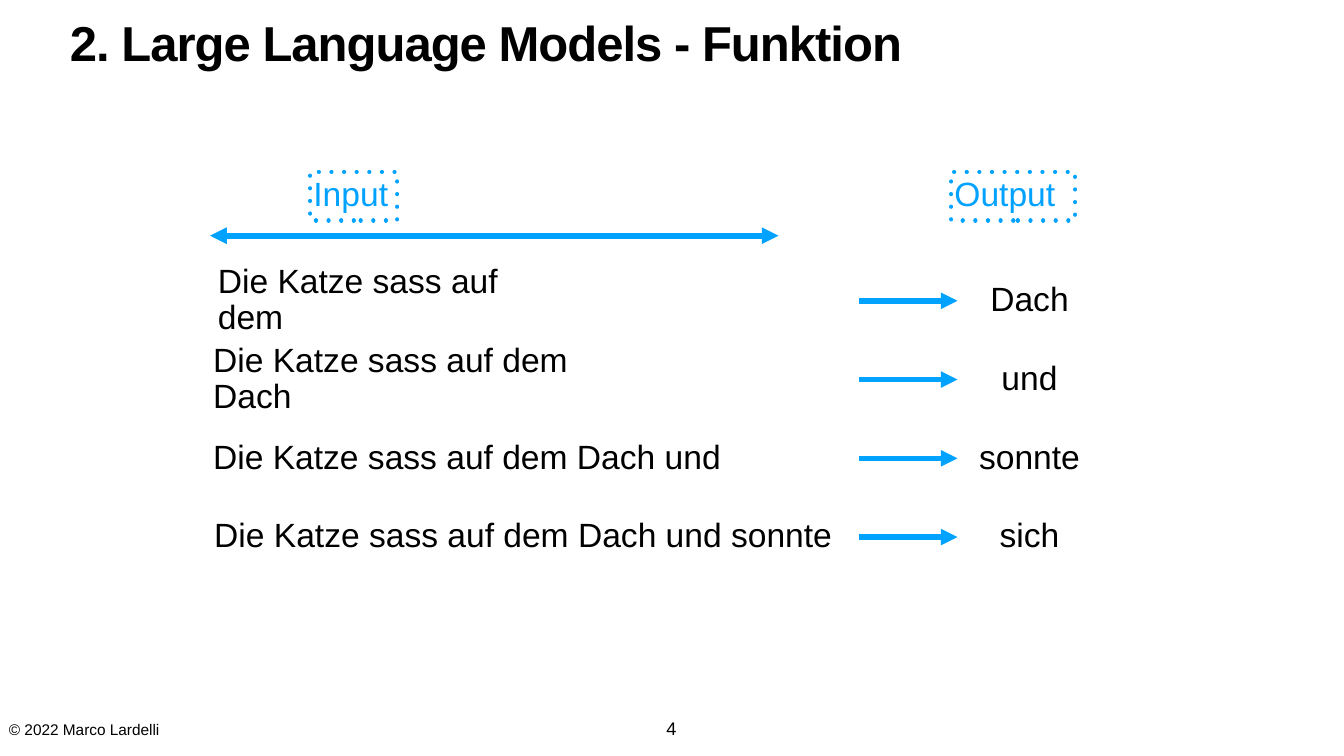
from lxml.etree import SubElement
from pptx import Presentation
from pptx.dml.color import RGBColor
from pptx.enum.shapes import MSO_CONNECTOR, MSO_SHAPE
from pptx.enum.text import MSO_ANCHOR, PP_ALIGN
from pptx.oxml.ns import qn
from pptx.util import Emu, Pt

EMU_PER_PX = 9525
BLACK, BLUE = "000000", "00A2FF"
PROMPTS = [
    ("Die Katze sass auf dem", "Dach", 409, 680, True),
    ("Die Katze sass auf dem Dach", "und", 400, 845, True),
    ("Die Katze sass auf dem Dach und", "sonnte", 400, 1000, False),
    ("Die Katze sass auf dem Dach und sonnte", "sich", 402, 1210, False),
]


def px(length):
    """Turn px into EMU."""
    return Emu(length * EMU_PER_PX)


def color(hex_code):
    """Turn a hex string into a colour."""
    return RGBColor.from_string(hex_code)


def write(shape, text, size, hex_code=BLACK, align=PP_ALIGN.LEFT,
          anchor=MSO_ANCHOR.MIDDLE, spacing=0.9, wrap=False, bold=False):
    """Fill a shape with one styled paragraph and return it."""
    frame = shape.text_frame
    frame.margin_left = frame.margin_right = px(6)
    frame.margin_top = frame.margin_bottom = px(6)
    frame.word_wrap = wrap
    frame.vertical_anchor = anchor
    para = frame.paragraphs[0]
    para.text = text
    para.alignment = align
    para.line_spacing = spacing
    para.font.name = "Arial"
    para.font.size = Pt(size)
    para.font.bold = bold
    para.font.color.rgb = color(hex_code)
    return para


def add_text(page, box, text, size, **style):
    """Add a text box at (left, top, width, height) in px."""
    return write(page.shapes.add_textbox(*map(px, box)), text, size, **style)


def add_arrow(page, left, right, y, double=False):
    """Add a horizontal arrow, pointing right or both ways."""
    arrow = page.shapes.add_connector(
        MSO_CONNECTOR.STRAIGHT, px(left), px(y), px(right), px(y))
    arrow.line.color.rgb = color(BLUE)
    arrow.line.width = Pt(8)
    line = arrow.line._get_or_add_ln()
    for end in ("headEnd", "tailEnd") if double else ("tailEnd",):
        SubElement(line, qn(f"a:{end}"), type="triangle")
    SubElement(arrow._element.spPr, qn("a:effectLst"))


def add_label(page, box, text):
    """Add a column label in a frame of round dots."""
    label = page.shapes.add_shape(MSO_SHAPE.RECTANGLE, *map(px, box))
    label.shadow.inherit = False
    label.fill.background()
    label.line.color.rgb = color(BLUE)
    label.line.width = Pt(6)
    line = label.line._get_or_add_ln()
    line.set("cap", "rnd")
    dash = SubElement(line, qn("a:custDash"))
    SubElement(dash, qn("a:ds"), d="100000", sp="200000")
    write(label, text, 48, hex_code=BLUE)


def add_header(page, top):
    """Add the two column labels and the span of the input."""
    add_label(page, (591, top, 166, 93), "Input")
    add_label(page, (1812, top, 236, 93), "Output")
    add_arrow(page, 400, 1483, top + 122, double=True)


def add_predictions(page, top, pitch=150, height=84):
    """Add one row for each prompt, its arrow and the next word."""
    for row, (prompt, word, left, width, wrap) in enumerate(PROMPTS):
        y = top + row * pitch
        add_text(page, (left, y, width, height), prompt, 48, wrap=wrap)
        add_arrow(page, 1636, 1824, y + height // 2)
        add_text(page, (1856, y, 210, height), word, 48, align=PP_ALIGN.CENTER)


def add_title(page, box):
    """Add the tightly set slide title."""
    para = add_text(page, box, "2. Large Language Models - Funktion", 70,
                    anchor=MSO_ANCHOR.TOP, spacing=0.8, wrap=True, bold=True)
    para.runs[0]._r.get_or_add_rPr().set("spc", "-140")


def add_footer(page, top):
    """Add the copyright line and the page number."""
    add_text(page, (11, top + 8, 302, 46), "© 2022 Marco Lardelli", 22)
    add_text(page, (1263, top, 32, 53), "4", 26, align=PP_ALIGN.CENTER,
             anchor=MSO_ANCHOR.BOTTOM, spacing=1.0)


def main():
    """Build and save the deck."""
    deck = Presentation()
    deck.slide_width, deck.slide_height = px(2560), px(1440)
    page = deck.slides.add_slide(deck.slide_layouts[6])
    add_title(page, (127, 40, 2307, 151))
    add_header(page, 327)
    add_predictions(page, 531)
    add_footer(page, 1360)
    deck.save("out.pptx")


if __name__ == "__main__":
    main()
